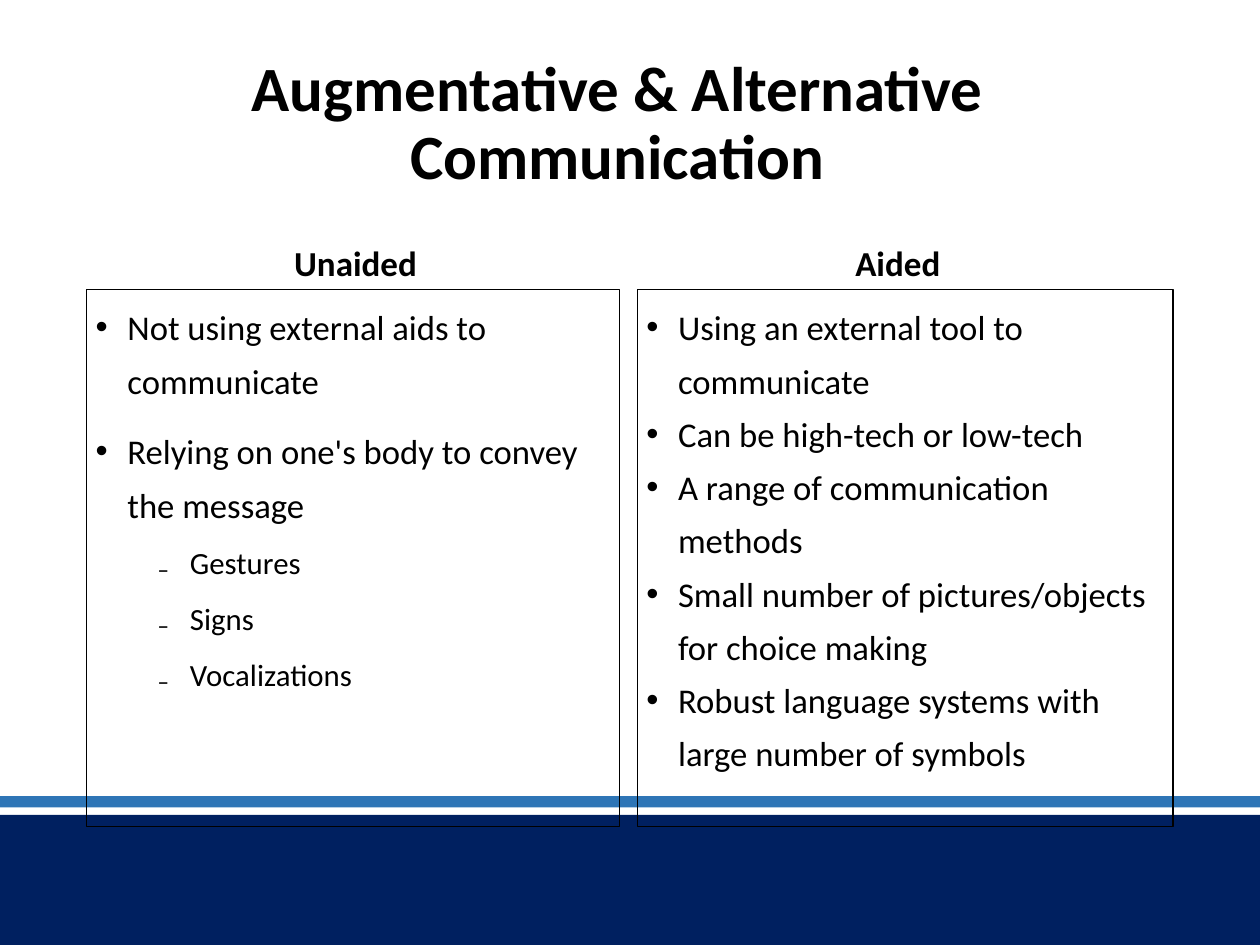
from dataclasses import dataclass

from lxml.etree import SubElement
from pptx import Presentation
from pptx.dml.color import RGBColor
from pptx.enum.shapes import MSO_SHAPE
from pptx.enum.text import MSO_ANCHOR, MSO_AUTO_SIZE, PP_ALIGN
from pptx.oxml.ns import qn
from pptx.util import Cm, Pt

COLORS = {"text": "000000", "navy": "002060", "blue": "2E75B6"}
FONT = "Calibri"
PAGE_WIDTH, PAGE_HEIGHT = 25.4, 19.05


@dataclass
class Area:
    left: float
    top: float
    width: float
    height: float

    def lengths(self) -> tuple:
        return Cm(self.left), Cm(self.top), Cm(self.width), Cm(self.height)


@dataclass
class Item:
    text: str
    level: int = 0


@dataclass
class Column:
    heading: str
    heading_area: Area
    list_area: Area
    items: list[Item]
    gaps: tuple[float, float]


@dataclass
class BulletStyle:
    symbol: str
    size: float
    indent: float


BULLETS = (BulletStyle("•", 19.8, 0.64), BulletStyle("₋", 17.6, 1.9))
HANGING = 0.64

BANDS = (
    (Area(0, 16.43, PAGE_WIDTH, 2.62), "navy"),
    (Area(0, 16.05, PAGE_WIDTH, 0.23), "blue"),
)

COLUMNS = (
    Column(
        "Unaided",
        Area(1.8, 3.56, 10.74, 2.29),
        Area(1.75, 5.84, 10.74, 10.82),
        [
            Item("Not using external aids to communicate"),
            Item("Relying on one's body to convey the message"),
            Item("Gestures", 1),
            Item("Signs", 1),
            Item("Vocalizations", 1),
        ],
        (10, 5),
    ),
    Column(
        "Aided",
        Area(12.7, 3.56, 10.8, 2.29),
        Area(12.85, 5.84, 10.8, 10.82),
        [
            Item("Using an external tool to communicate"),
            Item("Can be high-tech or low-tech"),
            Item("A range of communication methods"),
            Item("Small number of pictures/objects for choice making"),
            Item("Robust language systems with large number of symbols"),
        ],
        (0, 0),
    ),
)


def color(name: str) -> RGBColor:
    return RGBColor.from_string(COLORS[name])


def write(para, text: str, *, size: float, bold: bool = False,
          align=PP_ALIGN.LEFT, spacing: float = 0.9, before: float = 0) -> None:
    para.alignment = align
    para.line_spacing = spacing
    para.space_before = Pt(before)
    span = para.add_run()
    span.text = text
    span.font.name = FONT
    span.font.size = Pt(size)
    span.font.bold = bold
    span.font.color.rgb = color("text")


def add_bullet(para, style: BulletStyle) -> None:
    properties = para._p.get_or_add_pPr()
    properties.set("marL", str(Cm(style.indent)))
    properties.set("indent", str(-Cm(HANGING)))
    SubElement(properties, qn("a:buFont"), typeface="Arial")
    SubElement(properties, qn("a:buChar"), char=style.symbol)


def prepare_frame(box, anchor):
    frame = box.text_frame
    frame.word_wrap = True
    frame.auto_size = MSO_AUTO_SIZE.NONE
    frame.vertical_anchor = anchor
    return frame


def draw_band(page, area: Area, fill: str) -> None:
    band = page.shapes.add_shape(MSO_SHAPE.RECTANGLE, *area.lengths())
    band.shadow.inherit = False
    band.fill.solid()
    band.fill.fore_color.rgb = color(fill)
    band.line.fill.background()


def draw_title(page, text: str) -> None:
    title = page.shapes.title
    title.left, title.top, title.width, title.height = Area(1.22, 1.02, 22.45, 3.68).lengths()
    frame = prepare_frame(title, MSO_ANCHOR.TOP)
    write(frame.paragraphs[0], text, size=36, bold=True, align=PP_ALIGN.CENTER)


def draw_column(page, column: Column) -> None:
    box = page.shapes.add_textbox(*column.list_area.lengths())
    box.line.color.rgb = color("text")
    box.line.width = Pt(0.75)
    frame = prepare_frame(box, MSO_ANCHOR.TOP)
    frame.margin_left = frame.margin_right = Cm(0.18)
    frame.margin_top = frame.margin_bottom = Cm(0.1)
    for index, item in enumerate(column.items):
        para = frame.add_paragraph() if index else frame.paragraphs[0]
        style = BULLETS[item.level]
        para.level = item.level
        add_bullet(para, style)
        write(para, item.text, size=style.size, spacing=1.28,
              before=column.gaps[item.level] if index else 0)

    heading = page.shapes.add_textbox(*column.heading_area.lengths())
    frame = prepare_frame(heading, MSO_ANCHOR.BOTTOM)
    write(frame.paragraphs[0], column.heading, size=20, bold=True, align=PP_ALIGN.CENTER)


def main() -> None:
    deck = Presentation()
    deck.slide_width, deck.slide_height = Cm(PAGE_WIDTH), Cm(PAGE_HEIGHT)
    page = deck.slides.add_slide(deck.slide_layouts[5])
    for area, fill in BANDS:
        draw_band(page, area, fill)
    for column in COLUMNS:
        draw_column(page, column)
    draw_title(page, "Augmentative & Alternative Communication")
    deck.save("out.pptx")


if __name__ == "__main__":
    main()
